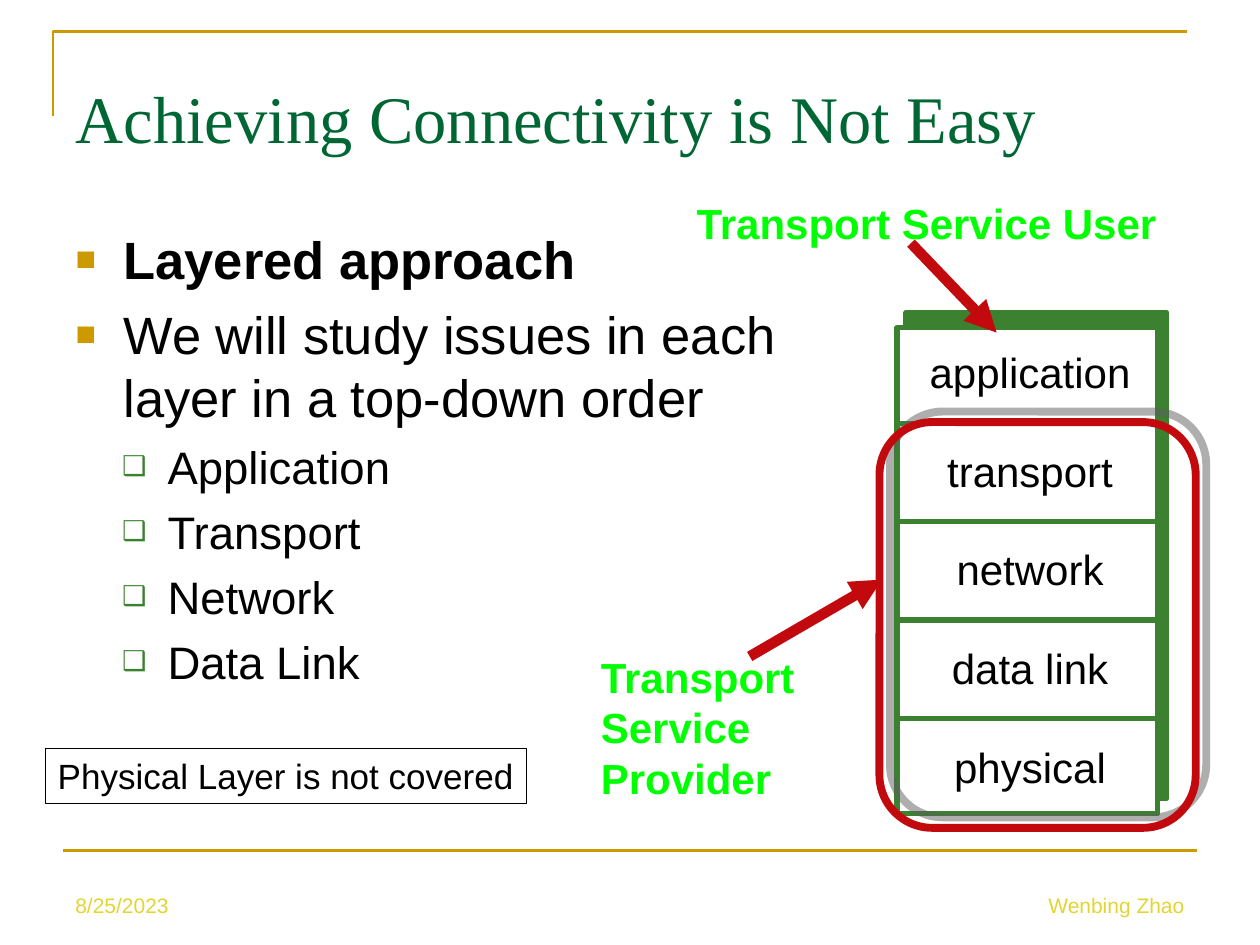
from lxml.etree import SubElement
from pptx import Presentation
from pptx.dml.color import RGBColor
from pptx.enum.shapes import MSO_CONNECTOR, MSO_SHAPE
from pptx.enum.text import MSO_ANCHOR, PP_ALIGN
from pptx.oxml import parse_xml
from pptx.oxml.ns import nsdecls, qn
from pptx.util import Inches, Pt

COLORS = {
    "gold": "CC9900", "footer": "E2D532", "title": "006633", "text": "000000",
    "green": "3B812F", "label": "00FF00", "red": "C20A0E", "white": "FFFFFF",
    "shadow": "5F5F5F",
}
BULLETS = [
    {"char": "■", "color": "gold", "scale": 65, "margin": 0.38, "indent": -0.38, "size": 30, "before": 7},
    {"char": "❑", "color": "green", "scale": 60, "margin": 0.73, "indent": -0.36, "size": 26, "before": 6},
]


def rgb(name):
    return RGBColor.from_string(COLORS[name])


class SlideBuilder:
    def __init__(self, slide, font="Arial"):
        self.slide = slide
        self.font = font

    def add_words(self, paragraph, text, size, color="text", bold=False, font=None, **layout):
        run = paragraph.add_run()
        run.text = text
        for name, value in {"name": font or self.font, "size": Pt(size), "bold": bold}.items():
            setattr(run.font, name, value)
        run.font.color.rgb = rgb(color)
        for name, value in layout.items():
            setattr(paragraph, name, value)

    def place(self, shape, box):
        for name, value in zip(("left", "top", "width", "height"), box):
            setattr(shape, name, Inches(value))

    def outline(self, shape, color, width):
        shape.line.color.rgb = rgb(color)
        shape.line.width = Pt(width)

    def title(self, text, box):
        shape = self.slide.shapes.title
        self.place(shape, box)
        shape.text_frame.vertical_anchor = MSO_ANCHOR.MIDDLE
        self.add_words(shape.text_frame.paragraphs[0], text, 38, "title",
                       font="Times New Roman", alignment=PP_ALIGN.LEFT)

    def bullets(self, items, box):
        shape = self.slide.placeholders[1]
        self.place(shape, box)
        frame = shape.text_frame
        for index, (level, text, bold) in enumerate(items):
            paragraph = frame.add_paragraph() if index else frame.paragraphs[0]
            style = BULLETS[level]
            self.add_words(paragraph, text, style["size"], bold=bold, level=level,
                           space_before=Pt(style["before"]))
            properties = paragraph._p.get_or_add_pPr()
            properties.set("marL", str(Inches(style["margin"])))
            properties.set("indent", str(Inches(style["indent"])))
            bullet_color = SubElement(properties, qn("a:buClr"))
            SubElement(bullet_color, qn("a:srgbClr"), val=COLORS[style["color"]])
            SubElement(properties, qn("a:buSzPct"), val=str(style["scale"] * 1000))
            SubElement(properties, qn("a:buChar"), char=style["char"])

    def text(self, lines, box, size, color="text", bold=False, align=PP_ALIGN.LEFT,
             anchor=MSO_ANCHOR.TOP, gap=0):
        shape = self.slide.shapes.add_textbox(*map(Inches, box))
        frame = shape.text_frame
        frame.word_wrap = False
        frame.vertical_anchor = anchor
        for index, line in enumerate(lines):
            paragraph = frame.add_paragraph() if index else frame.paragraphs[0]
            self.add_words(paragraph, line, size, color, bold, alignment=align,
                           space_before=Pt(gap if index else 0))
        return shape

    def box(self, kind, box, fill, line, width):
        shape = self.slide.shapes.add_shape(kind, *map(Inches, box))
        shape.shadow.inherit = False
        if fill:
            shape.fill.solid()
            shape.fill.fore_color.rgb = rgb(fill)
        else:
            shape.fill.background()
        self.outline(shape, line, width)
        return shape

    def cast_shadow(self, shape, color, distance, degrees, opacity):
        effects = shape._element.spPr.find(qn("a:effectLst"))
        effects.append(parse_xml(
            f'<a:outerShdw {nsdecls("a")} dist="{Pt(distance)}" dir="{degrees * 60000}" '
            f'algn="ctr" rotWithShape="0"><a:srgbClr val="{COLORS[color]}">'
            f'<a:alpha val="{opacity * 1000}"/></a:srgbClr></a:outerShdw>'))

    def line(self, start, end, color, width, arrow=False):
        connector = self.slide.shapes.add_connector(
            MSO_CONNECTOR.STRAIGHT, *map(Inches, (*start, *end)))
        self.outline(connector, color, width)
        if arrow:
            SubElement(connector.line._get_or_add_ln(), qn("a:tailEnd"), type="triangle")
        SubElement(connector._element.spPr, qn("a:effectLst"))

    def corner(self, points, color, width):
        start, *rest = [tuple(map(Inches, point)) for point in points]
        builder = self.slide.shapes.build_freeform(*start)
        builder.add_line_segments(rest, close=False)
        shape = builder.convert_to_shape()
        shape.shadow.inherit = False
        shape.fill.background()
        self.outline(shape, color, width)


def main():
    presentation = Presentation()
    presentation.slide_width = Inches(10)
    presentation.slide_height = Inches(7.5)
    slide = presentation.slides.add_slide(presentation.slide_layouts[1])
    builder = SlideBuilder(slide)

    builder.corner([(0.42, 0.92), (0.42, 0.25), (9.42, 0.25)], "gold", 1.5)
    builder.line((0.5, 6.75), (9.5, 6.75), "gold", 1.5)
    for text, left, align in (("8/25/2023", 0.5, PP_ALIGN.LEFT), ("Wenbing Zhao", 7.17, PP_ALIGN.RIGHT)):
        footer = builder.text([text], (left, 6.83, 2.33, 0.5), 12, "footer",
                              align=align, anchor=MSO_ANCHOR.BOTTOM)
        footer.text_frame.word_wrap = True

    builder.title("Achieving Connectivity is Not Easy", (0.5, 0.3, 9, 1.25))
    builder.bullets([
        (0, "Layered approach", True),
        (0, "We will study issues in each layer in a top-down order", False),
        *((1, name, False) for name in ("Application", "Transport", "Network", "Data Link")),
    ], (0.5, 1.75, 6.34, 4.95))

    layers = ["application", "transport", "network", "data link", "physical"]
    left, top, width, height = 7.12, 2.6, 2.07, 3.86
    builder.box(MSO_SHAPE.RECTANGLE, (left + 0.07, top - 0.12, width, height), "green", "green", 3)
    builder.box(MSO_SHAPE.RECTANGLE, (left, top, width, height), "white", "green", 3)
    builder.text(layers, (7.27, 2.7, 1.81, 3.74), 24, align=PP_ALIGN.CENTER, gap=27.6)
    for index in range(len(layers) - 1):
        divider = 3.36 + 0.78 * index
        builder.line((left, divider), (left + width, divider), "green", 3)
    provider = builder.box(MSO_SHAPE.ROUNDED_RECTANGLE, (6.98, 3.35, 2.51, 3.22), None, "red", 4.5)
    builder.cast_shadow(provider, "shadow", 8.5, 315, 50)

    builder.text(["Transport", "Service", "Provider"], (4.67, 5.12, 1.85, 1.3), 24, "label", True)
    builder.line((5.95, 5.21), (7, 4.6), "red", 6, arrow=True)
    builder.text(["Transport Service User"], (5.43, 1.52, 3.87, 0.5), 24, "label", True)
    builder.line((7.23, 1.93), (7.91, 2.64), "red", 6, arrow=True)
    note = builder.text(["Physical Layer is not covered"], (0.36, 5.94, 3.82, 0.44), 20)
    builder.outline(note, "text", 0.75)

    presentation.save("out.pptx")


if __name__ == "__main__":
    main()
